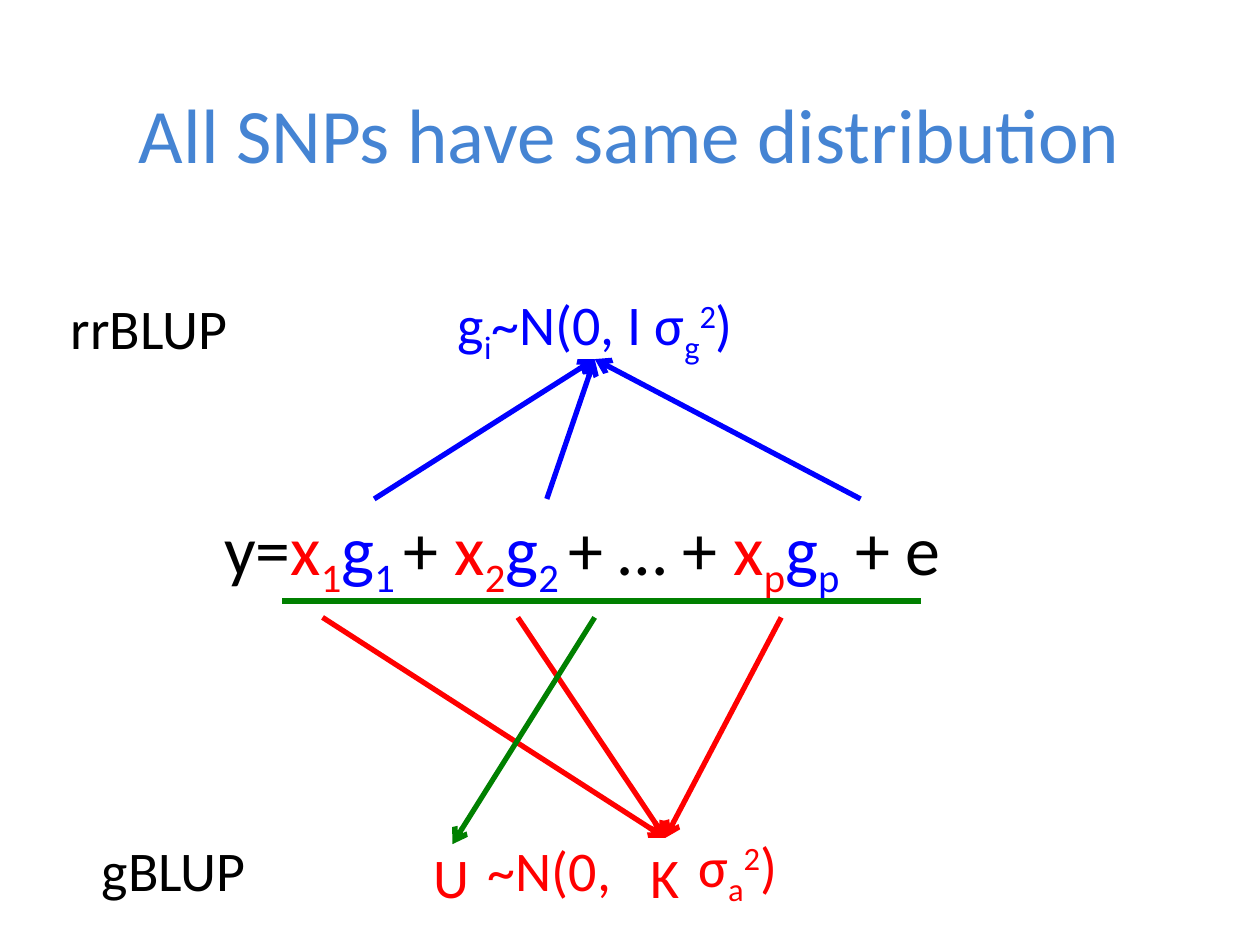
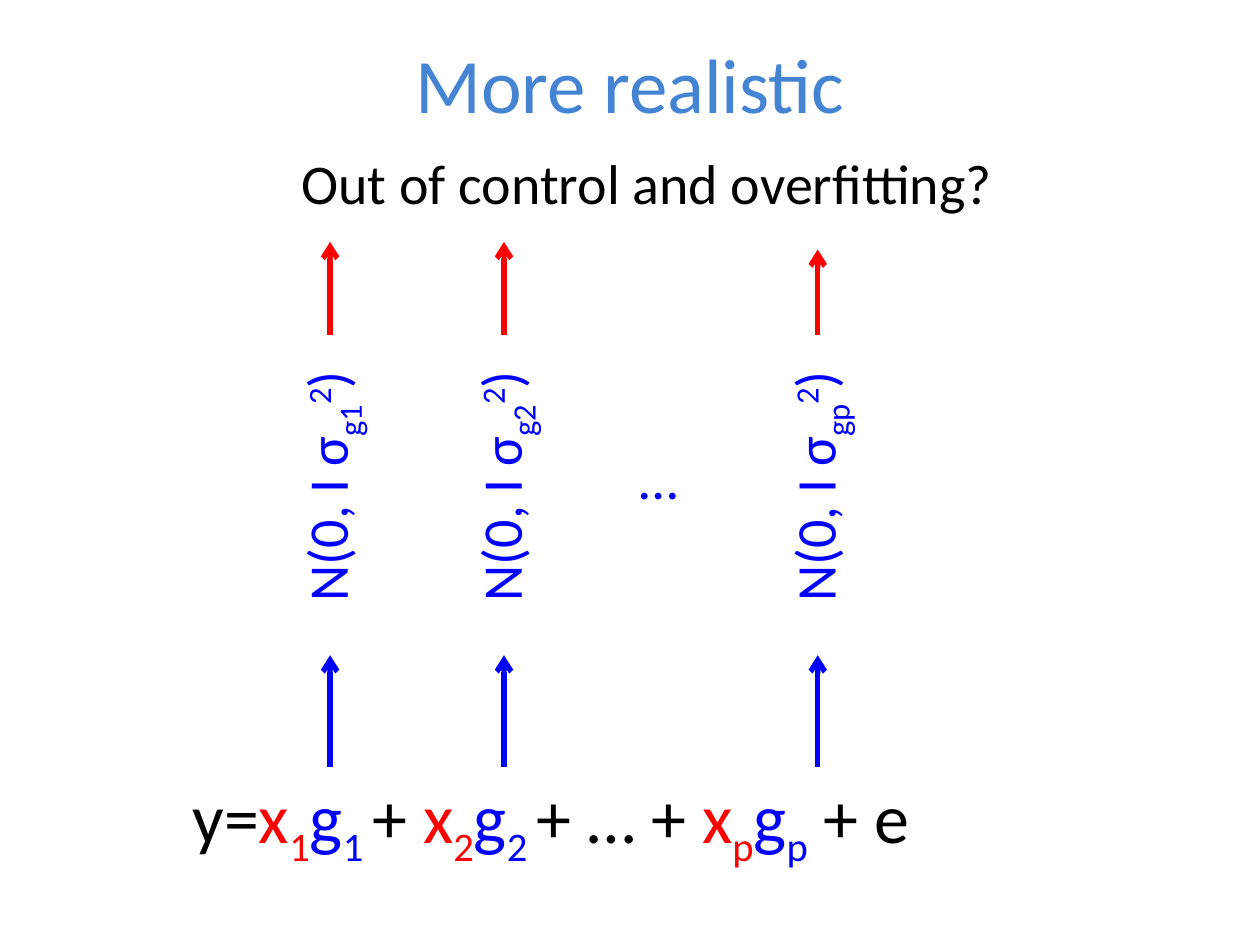
from dataclasses import dataclass

from pptx import Presentation
from pptx.dml.color import RGBColor
from pptx.enum.shapes import MSO_CONNECTOR
from pptx.enum.text import MSO_ANCHOR, PP_ALIGN
from pptx.oxml import parse_xml
from pptx.oxml.ns import nsdecls
from pptx.slide import Slide
from pptx.util import Inches, Pt

CENTER, LEFT = PP_ALIGN.CENTER, PP_ALIGN.LEFT
MIDDLE, TOP = MSO_ANCHOR.MIDDLE, MSO_ANCHOR.TOP
STRAIGHT = MSO_CONNECTOR.STRAIGHT

FONT = "Calibri"
BLACK, RED, BLUE, GREEN, SKY = "000000", "FF0000", "0000FF", "008000", "4584D3"
SUB, SUP = -25, 30


@dataclass
class Bit:
    text: str
    base: int = 0
    color: str = ""


@dataclass
class Label:
    left: float
    top: float
    width: float
    bits: list[Bit]
    color: str = RED
    height: float = 0.5
    size: int = 32
    align: PP_ALIGN = CENTER
    anchor: MSO_ANCHOR = MIDDLE
    turn: int = 0
    inset: float = 0.1


@dataclass
class Line:
    start: tuple[float, float]
    end: tuple[float, float]
    color: str
    arrow: bool = True


def rgb(code: str) -> RGBColor:
    return RGBColor.from_string(code)


def term(index: str) -> list[Bit]:
    tail = index if index == "p" else index + " "
    return [
        Bit("x", 0, RED),
        Bit(index, SUB, RED),
        Bit("g", 0, BLUE),
        Bit(tail, SUB, BLUE),
    ]


def sigma(lead: str, index: str) -> list[Bit]:
    return [Bit(lead + "σ"), Bit(index, SUB), Bit("2", SUP), Bit(")")]


def add_label(slide: Slide, label: Label) -> None:
    box = slide.shapes.add_textbox(
        Inches(label.left), Inches(label.top), Inches(label.width), Inches(label.height)
    )
    box.rotation = label.turn
    frame = box.text_frame
    frame.word_wrap = True
    frame.vertical_anchor = label.anchor
    frame.margin_left = Inches(label.inset)
    para = frame.paragraphs[0]
    para.alignment = label.align
    para.font.name = FONT
    para.font.size = Pt(label.size)
    para.font.color.rgb = rgb(label.color)
    for bit in label.bits:
        run = para.add_run()
        run.text = bit.text
        if bit.color:
            run.font.color.rgb = rgb(bit.color)
        if bit.base:
            run._r.get_or_add_rPr().set("baseline", str(bit.base * 1000))


def add_line(slide: Slide, line: Line) -> None:
    ends = [Inches(value) for value in line.start + line.end]
    link = slide.shapes.add_connector(STRAIGHT, *ends)
    link.line.color.rgb = rgb(line.color)
    link.line.width = Pt(3)
    if line.arrow:
        head = parse_xml(f'<a:tailEnd {nsdecls("a")} type="arrow"/>')
        link.line._get_or_add_ln().append(head)
    link._element.spPr.append(parse_xml(f'<a:effectLst {nsdecls("a")}/>'))


def add_title(slide: Slide, text: str, top: float) -> None:
    add_label(slide, Label(0.5, top, 9, [Bit(text)], SKY, 1.37, 44))


def add_model(slide: Slide, left: float, top: float) -> None:
    bits = [
        Bit("y="), *term("1"), Bit("+ "), *term("2"),
        Bit("+ … + "), *term("p"), Bit(" + e"),
    ]
    add_label(slide, Label(left, top, 7.4, bits, BLACK, 0.77, 40, LEFT, TOP))


def draw_same(slide: Slide) -> None:
    add_title(slide, "All SNPs have same distribution", 0.37)
    add_model(slide, 1.68, 3.96)
    lines = [Line((x, 4.9), (5.28, 6.65), RED) for x in (6.2, 4.11, 2.56)]
    lines += [Line((x, 3.96), (4.72, 2.85), BLUE) for x in (2.97, 4.34, 6.83)]
    lines += [
        Line((2.24, 4.77), (7.31, 4.77), GREEN, False),
        Line((4.72, 4.9), (3.59, 6.7), GREEN),
    ]
    for line in lines:
        add_line(slide, line)
    prior = [Bit("g"), Bit("i", SUB), *sigma("~N(0, I ", "g")]
    labels = [
        Label(3.15, 2.35, 3.15, prior, BLUE),
        Label(3.34, 6.65, 1.68, [Bit("~N(0,")], inset=0.46),
        Label(3.2, 6.7, 0.77, [Bit("U")]),
        Label(4.92, 6.7, 0.71, [Bit("K")]),
        Label(5.28, 6.65, 1.15, sigma("", "a")),
        Label(0.25, 2.35, 1.87, [Bit("rrBLUP")], BLACK),
        Label(0.5, 6.65, 1.76, [Bit("gBLUP")], BLACK),
    ]
    for label in labels:
        add_label(slide, label)


def draw_real(slide: Slide) -> None:
    add_title(slide, "More realistic", -0.03)
    add_model(slide, 1.43, 6.09)
    width = 2.38
    for x, index, tip in ((2.62, "1", 1.92), (4, "2", 1.92), (6.49, "p", 1.98)):
        add_line(slide, Line((x, 6.09), (x, 5.2), BLUE))
        add_line(slide, Line((x, 2.66), (x, tip), RED))
        prior = sigma("N(0, I ", "g" + index)
        add_label(slide, Label(x - width / 2, 3.61, width, prior, BLUE, turn=270))
    add_label(slide, Label(4.7, 3.54, 1.06, [Bit("…")], BLUE))
    query = [Bit("Out of control and overfitting?")]
    add_label(slide, Label(0.69, 1.13, 8.89, query, BLACK, 0.64, anchor=TOP))


def main() -> None:
    deck = Presentation()
    deck.slide_width, deck.slide_height = Inches(10), Inches(7.5)
    blank = deck.slide_layouts[6]
    for draw in (draw_same, draw_real):
        draw(deck.slides.add_slide(blank))
    deck.save("out.pptx")


if __name__ == "__main__":
    main()
